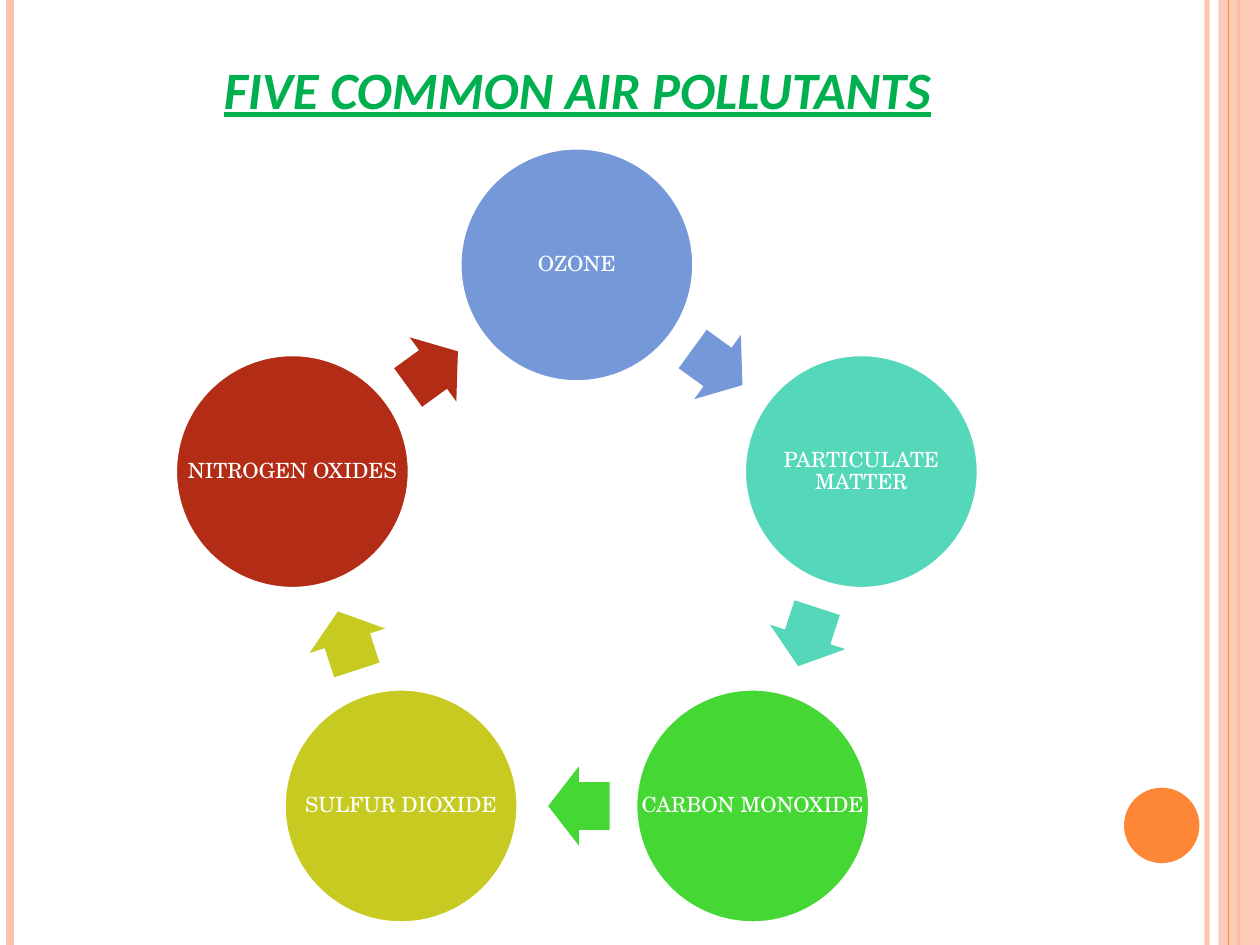
import math

import pptx
import pptx.dml.color
import pptx.enum.shapes
import pptx.enum.text
import pptx.oxml.ns
import pptx.util
from lxml import etree

Cm = pptx.util.Cm
Pt = pptx.util.Pt
SHAPE = pptx.enum.shapes.MSO_SHAPE
ANCHOR = pptx.enum.text.MSO_ANCHOR
qn = pptx.oxml.ns.qn

HEADING = "FIVE COMMON AIR POLLUTANTS"
POLLUTANTS = [
    ("OZONE", "7598D9"),
    ("PARTICULATE MATTER", "55D7BA"),
    ("CARBON MONOXIDE", "45D834"),
    ("SULFUR DIOXIDE", "C7CA20"),
    ("NITROGEN OXIDES", "B32C16"),
]
PEACH, ORANGE, WHITE, GREEN = "FEC3AE", "FE8637", "FFFFFF", "00B050"
STRIPES_BEHIND = [(24.33, PEACH, 3, 93), (0.2, PEACH, 4.5, 100), (24.97, ORANGE, 1.5, 100)]
STRIPES_FRONT = [(24.77, ORANGE, 0.75, 100)]

SLIDE_W, SLIDE_H = 25.4, 19.05
CENTER_X, CENTER_Y, RING = 11.63, 11.37, 6.03
CIRCLE = 4.72
ARROW_W, ARROW_H, ARROW_SETBACK = 1.24, 1.6, 0.04


def paint(color_format, color, opacity=100):
    color_format.solid()
    color_format.fore_color.rgb = pptx.dml.color.RGBColor.from_string(color)
    if opacity < 100:
        tint = color_format.fore_color._xFill.find(qn("a:srgbClr"))
        etree.SubElement(tint, qn("a:alpha")).set("val", str(opacity * 1000))


def add_filled(kind, x, y, w, h, color, opacity=100, outline=None):
    shape = slide.shapes.add_shape(kind, Cm(x), Cm(y), Cm(w), Cm(h))
    shape.shadow.inherit = False
    paint(shape.fill, color, opacity)
    if outline:
        paint(shape.line.fill, outline)
        shape.line.width = Pt(2)
    else:
        shape.line.fill.background()
    return shape


def add_stripe(x, color, width, opacity):
    stripe = slide.shapes.add_connector(
        pptx.enum.shapes.MSO_CONNECTOR.STRAIGHT, Cm(x), 0, Cm(x), Cm(SLIDE_H))
    paint(stripe.line.fill, color, opacity)
    stripe.line.width = Pt(width)
    etree.SubElement(stripe._element.spPr, qn("a:effectLst"))


def write(holder, text, font, size, color, anchor, spacing=1.0, inset=None, emphasis=False):
    frame = holder.text_frame
    frame.word_wrap = True
    frame.vertical_anchor = anchor
    if inset is not None:
        frame.margin_left = frame.margin_right = Cm(inset)
        frame.margin_top = frame.margin_bottom = Cm(inset)
    paragraph = frame.paragraphs[0]
    paragraph.alignment = pptx.enum.text.PP_ALIGN.CENTER
    paragraph.line_spacing = spacing
    run = paragraph.add_run()
    run.text = text
    run.font.name = font
    run.font.size = Pt(size)
    run.font.bold = run.font.italic = run.font.underline = emphasis
    paint(run.font.fill, color)


def ring_point(step):
    angle = math.radians(360 / len(POLLUTANTS) * step)
    return CENTER_X + RING * math.sin(angle), CENTER_Y - RING * math.cos(angle)


deck = pptx.Presentation()
deck.slide_width, deck.slide_height = Cm(SLIDE_W), Cm(SLIDE_H)
slide = deck.slides.add_slide(deck.slide_layouts[5])

for stripe in STRIPES_BEHIND:
    add_stripe(*stripe)
add_filled(SHAPE.RECTANGLE, 24.56, 0, 0.84, SLIDE_H, PEACH, opacity=87)
for stripe in STRIPES_FRONT:
    add_stripe(*stripe)
add_filled(SHAPE.OVAL, 22.66, 15.88, 1.52, 1.52, ORANGE)

heading = slide.shapes.title
heading.left, heading.top = Cm(1.27), Cm(0.76)
heading.width, heading.height = Cm(20.75), Cm(1.78)
write(heading, HEADING, "Calibri", 30, GREEN, ANCHOR.BOTTOM, emphasis=True)

for step, (pollutant, color) in enumerate(POLLUTANTS):
    x, y = ring_point(step)
    left, top = x - CIRCLE / 2, y - CIRCLE / 2
    add_filled(SHAPE.OVAL, left, top, CIRCLE, CIRCLE, color, outline=WHITE)
    label = slide.shapes.add_textbox(Cm(left), Cm(top), Cm(CIRCLE), Cm(CIRCLE))
    write(label, pollutant, "TeX Gyre Schola", 12, WHITE, ANCHOR.MIDDLE, spacing=0.9, inset=0.05)

    next_x, next_y = ring_point(step + 1)
    heading_angle = math.atan2(next_y - y, next_x - x)
    arrow_x = (x + next_x) / 2 - ARROW_SETBACK * math.cos(heading_angle)
    arrow_y = (y + next_y) / 2 - ARROW_SETBACK * math.sin(heading_angle)
    arrow = add_filled(SHAPE.RIGHT_ARROW, arrow_x - ARROW_W / 2, arrow_y - ARROW_H / 2,
                       ARROW_W, ARROW_H, color)
    arrow.adjustments[0], arrow.adjustments[1] = 0.6, 0.5
    arrow.rotation = round(math.degrees(heading_angle)) % 360

deck.save("out.pptx")
